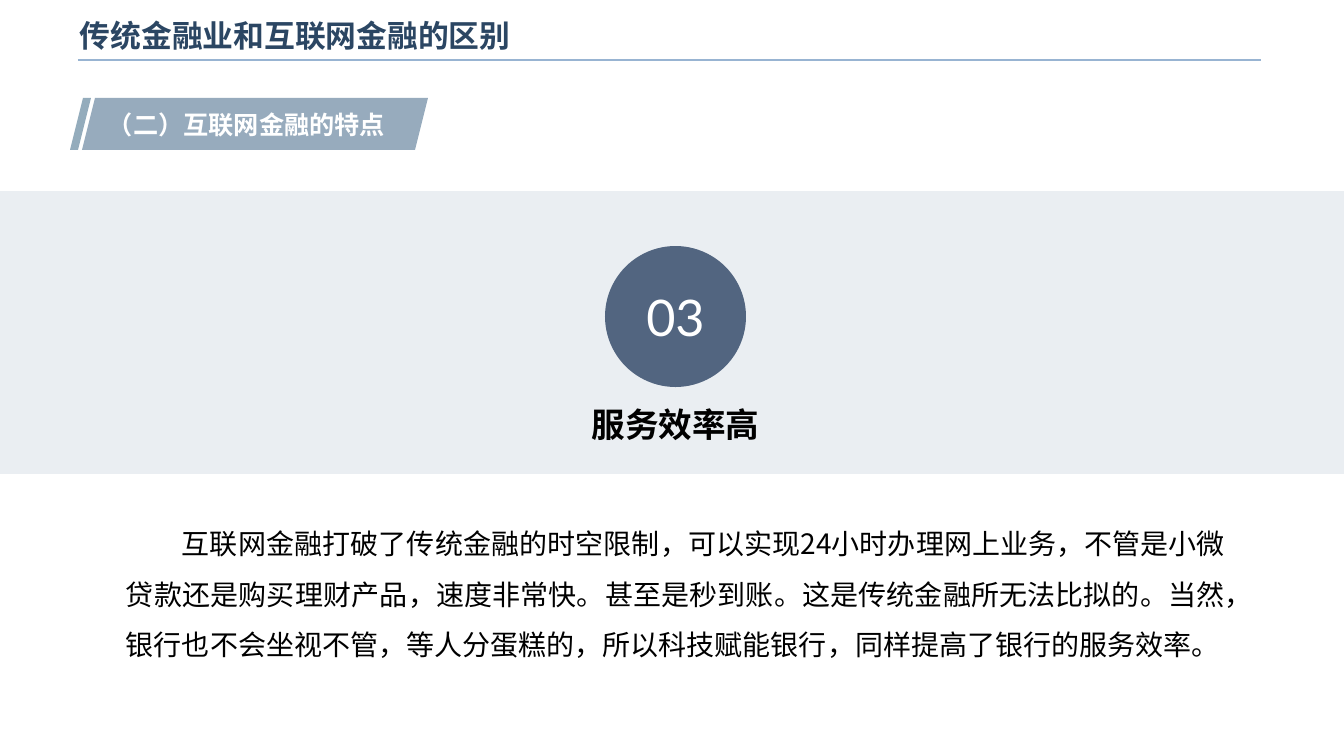
import pptx
import pptx.util
import pptx.dml.color
import pptx.enum.shapes
import pptx.enum.text
import pptx.oxml
import pptx.oxml.ns

SHAPE = pptx.enum.shapes.MSO_SHAPE
ALIGN = pptx.enum.text.PP_ALIGN
ANCHOR = pptx.enum.text.MSO_ANCHOR
CJK = "Noto Sans CJK SC"

# Content
TITLE = "传统金融业和互联网金融的区别"
SECTION = "（二）互联网金融的特点"
NUMBER = "03"
FEATURE = "服务效率高"
DESCRIPTION = (
    "互联网金融打破了传统金融的时空限制，可以实现24小时办理网上业务，不管是小微贷款还是购买理财产品，"
    "速度非常快。甚至是秒到账。这是传统金融所无法比拟的。当然，银行也不会坐视不管，等人分蛋糕的，"
    "所以科技赋能银行，同样提高了银行的服务效率。"
)

# Layout in px: left, top, width, height
SLIDE = (1344, 756)
RULE = (78, 60, 1261, 60)  # from x, y to x, y
TITLE_BOX = (70, 9, 1080, 53)
BAND = (0, 191, SLIDE[0], 283)
TAGS = [((70, 98, 21, 52), "94ACBC"), ((82, 98, 346, 52), "97ABBD")]
SLANT = 13
SECTION_BOX = (98, 104, 307, 40)
FEATURE_BOX = (109, 387, 1133, 62)
BADGE = (605, 246, 141, 141)
DESCRIPTION_BOX = (116, 505, 1119, 162)
INDENT = 56


def px(length):
    return pptx.util.Emu(round(length * 914400 / 100.8))


def color(value):
    return pptx.dml.color.RGBColor.from_string(value)


def add_filled(preset, box, fill):
    shape = slide.shapes.add_shape(preset, *map(px, box))
    shape.shadow.inherit = False
    shape.fill.solid()
    shape.fill.fore_color.rgb = color(fill)
    shape.line.fill.background()
    return shape


def write(shape, text, size, ink, font=CJK, bold=False, align=ALIGN.LEFT,
          spacing=1.0, anchor=ANCHOR.TOP):
    frame = shape.text_frame
    frame.word_wrap = True
    frame.vertical_anchor = anchor
    frame.text = text
    paragraph = frame.paragraphs[0]
    paragraph.alignment = align
    paragraph.line_spacing = spacing
    run = paragraph.runs[0]
    run.font.size = pptx.util.Pt(size)
    run.font.bold = bold
    run.font.color.rgb = color(ink)
    run.font.name = font
    # East Asian glyphs need their own typeface entry
    east_asian = pptx.oxml.parse_xml(
        f'<a:ea {pptx.oxml.ns.nsdecls("a")} typeface="{CJK}"/>')
    run.font._element.append(east_asian)
    return paragraph


def add_text(box, *args, **kwargs):
    return write(slide.shapes.add_textbox(*map(px, box)), *args, **kwargs)


deck = pptx.Presentation()
deck.slide_width, deck.slide_height = map(px, SLIDE)
slide = deck.slides.add_slide(deck.slide_layouts[6])

# Title and rule
rule = slide.shapes.add_connector(
    pptx.enum.shapes.MSO_CONNECTOR.STRAIGHT, *map(px, RULE))
rule.line.color.rgb = color("98B4D2")
rule.line.width = pptx.util.Pt(1)
rule._element.spPr.append(
    pptx.oxml.parse_xml(f'<a:effectLst {pptx.oxml.ns.nsdecls("a")}/>'))
add_text(TITLE_BOX, TITLE, 22, "2B4663", font="Arial", bold=True,
         anchor=ANCHOR.MIDDLE)

# Section tag
for box, fill in TAGS:
    tag = add_filled(SHAPE.PARALLELOGRAM, box, fill)
    tag.adjustments[0] = SLANT / min(box[2:])
add_text(SECTION_BOX, SECTION, 18, "FFFFFF", bold=True)

# Feature band with numbered badge
add_filled(SHAPE.RECTANGLE, BAND, "EAEEF2")
badge = add_filled(SHAPE.OVAL, BADGE, "526580")
write(badge, NUMBER, 36, "FFFFFF", font="Lato", align=ALIGN.CENTER,
      anchor=ANCHOR.MIDDLE)
add_text(FEATURE_BOX, FEATURE, 24, "000000", bold=True, align=ALIGN.CENTER,
         spacing=1.3)

# Description
description = add_text(DESCRIPTION_BOX, DESCRIPTION, 20, "000000",
                       align=ALIGN.JUSTIFY, spacing=1.5)
description._p.get_or_add_pPr().set("indent", str(px(INDENT)))

deck.save("out.pptx")
